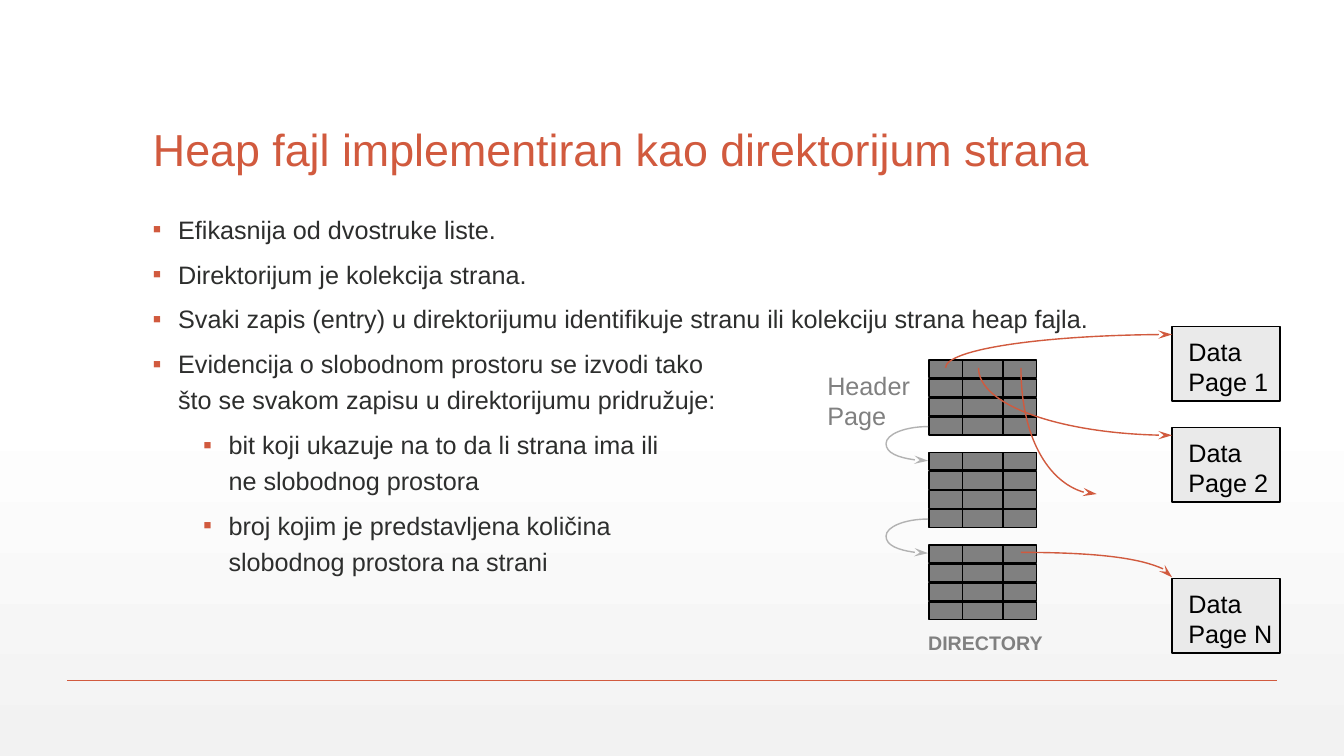
import lxml.etree
import pptx
import pptx.dml.color
import pptx.enum.shapes
import pptx.enum.text
import pptx.oxml.ns
import pptx.util

Cm = pptx.util.Cm
Pt = pptx.util.Pt
RGBColor = pptx.dml.color.RGBColor
qn = pptx.oxml.ns.qn

RUST = RGBColor(0xD1, 0x5A, 0x3E)
INK = RGBColor(0x2D, 0x2E, 0x2D)
BLACK = RGBColor(0, 0, 0)
WHITE = RGBColor(0xFF, 0xFF, 0xFF)
MIST = RGBColor(0xF2, 0xF2, 0xF2)
PALE = RGBColor(0xEA, 0xEA, 0xEA)
GRAY = RGBColor(0x80, 0x80, 0x80)
SILVER = RGBColor(0xB2, 0xB2, 0xB2)

deck = pptx.Presentation()
deck.slide_width = Cm(33.87)
deck.slide_height = Cm(19.05)
page = deck.slides.add_slide(deck.slide_layouts[5])
shapes = page.shapes

backdrop = page.background.fill
backdrop.gradient()
backdrop.gradient_angle = 270
for stop, position, color in zip(backdrop.gradient_stops, (0.53, 1), (WHITE, MIST)):
    stop.position = position
    stop.color.rgb = color


def style(font, size, color, bold=False):
    font.name = "Arial"
    font.size = Pt(size)
    font.bold = bold
    font.color.rgb = color


def outline(shape, color):
    shape.line.color.rgb = color
    shape.line.width = Pt(1)
    properties = shape._element.spPr
    if properties.find(qn("a:effectLst")) is None:
        lxml.etree.SubElement(properties, qn("a:effectLst"))


title = shapes.title
title.left, title.top, title.width, title.height = Cm(3.6), Cm(1.4), Cm(26.67), Cm(3.17)
title.text_frame.text = "Heap fajl implementiran kao direktorijum strana"
title.text_frame.vertical_anchor = pptx.enum.text.MSO_ANCHOR.BOTTOM
heading = title.text_frame.paragraphs[0]
heading.alignment = pptx.enum.text.PP_ALIGN.LEFT
heading.line_spacing = 0.9
style(heading.font, 32, RUST)

bullets = [
    (0, "Efikasnija od dvostruke liste."),
    (0, "Direktorijum je kolekcija strana."),
    (0, "Svaki zapis (entry) u direktorijumu identifikuje stranu ili kolekciju strana heap fajla."),
    (0, "Evidencija o slobodnom prostoru se izvodi tako \nšto se svakom zapisu u direktorijumu pridružuje:"),
    (1, "bit koji ukazuje na to da li strana ima ili \nne slobodnog prostora"),
    (1, "broj kojim je predstavljena količina \nslobodnog prostora na strani"),
]
body = shapes.add_textbox(Cm(3.6), Cm(5.12), Cm(28.68), Cm(12.22)).text_frame
body.word_wrap = True
for index, (level, text) in enumerate(bullets):
    para = body.add_paragraph() if index else body.paragraphs[0]
    para.text = text
    para.level = level
    para.line_spacing = 1.2
    para.space_before = Pt(6)
    layout = para._p.get_or_add_pPr()
    layout.set("marL", str(Cm(0.64 + 1.27 * level)))
    layout.set("indent", str(Cm(-0.64)))
    bullet_color = lxml.etree.SubElement(layout, qn("a:buClr"))
    lxml.etree.SubElement(bullet_color, qn("a:srgbClr"), val=str(RUST))
    lxml.etree.SubElement(layout, qn("a:buFont"), typeface="Arial")
    lxml.etree.SubElement(layout, qn("a:buChar"), char="▪")
    style(para.font, 18, INK)

directory_tops = [9.07 + 2.33 * number for number in range(3)]
boxes = [(23.41, top + 0.48 * row, 0.45, GRAY) for top in directory_tops for row in range(4)]
data_pages = [(8.23, "1"), (10.77, "2"), (14.58, "N")]
boxes += [(29.54, top, 1.88, PALE) for top, name in data_pages]
for left, top, height, color in boxes:
    box = shapes.add_shape(
        pptx.enum.shapes.MSO_SHAPE.RECTANGLE, Cm(left), Cm(top), Cm(2.72), Cm(height))
    box.shadow.inherit = False
    box.fill.solid()
    box.fill.fore_color.rgb = color
    outline(box, BLACK)

rules = [(1.7, 17.15, 32.18, 17.15, RUST)]
rules += [(x, top, x, top + 1.89, BLACK) for top in directory_tops for x in (24.26, 25.28)]
for x1, y1, x2, y2, color in rules:
    rule = shapes.add_connector(
        pptx.enum.shapes.MSO_CONNECTOR.STRAIGHT, Cm(x1), Cm(y1), Cm(x2), Cm(y2))
    outline(rule, color)

labels = [(29.7, top + 0.12, 2.75, 1.8, f"Data\nPage {name}", 18, BLACK, False)
          for top, name in data_pages]
labels += [
    (20.6, 9.2, 2.69, 1.8, "Header\nPage", 18, GRAY, False),
    (23.14, 15.77, 3.43, 0.86, "DIRECTORY", 14, GRAY, True),
]
for left, top, width, height, text, size, color, bold in labels:
    label = shapes.add_textbox(Cm(left), Cm(top), Cm(width), Cm(height)).text_frame
    label.word_wrap = False
    label.auto_size = pptx.enum.text.MSO_AUTO_SIZE.SHAPE_TO_FIT_TEXT
    label.text = text
    for para in label.paragraphs:
        style(para.font, size, color, bold)

curves = []
for top in (10.75, 13.08):
    curves += [
        (SILVER, False, (23.39, top), (22.33, top), (22.33, top + 0.43)),
        (SILVER, True, (22.33, top + 0.43), (22.33, top + 0.86), (23.39, top + 0.86)),
    ]
curves += [
    (RUST, True, (23.83, 9.27), (23.83, 8.43), (29.54, 8.43)),
    (RUST, True, (24.66, 9.27), (24.66, 10.97), (29.54, 10.97)),
    (RUST, True, (25.73, 9.27), (25.73, 12.45), (27.64, 12.45)),
    (RUST, True, (25.73, 13.92), (29.54, 13.92), (29.54, 14.55)),
]
ROUNDNESS = 0.55
for color, pointed, start, corner, end in curves:
    controls = [
        [Cm(a + (c - a) * ROUNDNESS) for a, c in zip(anchor, corner)] for anchor in (start, end)
    ]
    builder = shapes.build_freeform(Cm(start[0]), Cm(start[1]))
    builder.add_line_segments([*controls, [Cm(end[0]), Cm(end[1])]], close=False)
    curve = builder.convert_to_shape()
    segments = list(curve._element.iter(qn("a:lnTo")))
    bend = lxml.etree.SubElement(segments[0].getparent(), qn("a:cubicBezTo"))
    for segment in segments:
        bend.append(segment[0])
        segment.getparent().remove(segment)
    curve.shadow.inherit = False
    curve.fill.background()
    outline(curve, color)
    if pointed:
        stroke = curve._element.spPr.find(qn("a:ln"))
        lxml.etree.SubElement(stroke, qn("a:tailEnd"), type="stealth", w="med", len="lg")

deck.save("out.pptx")
